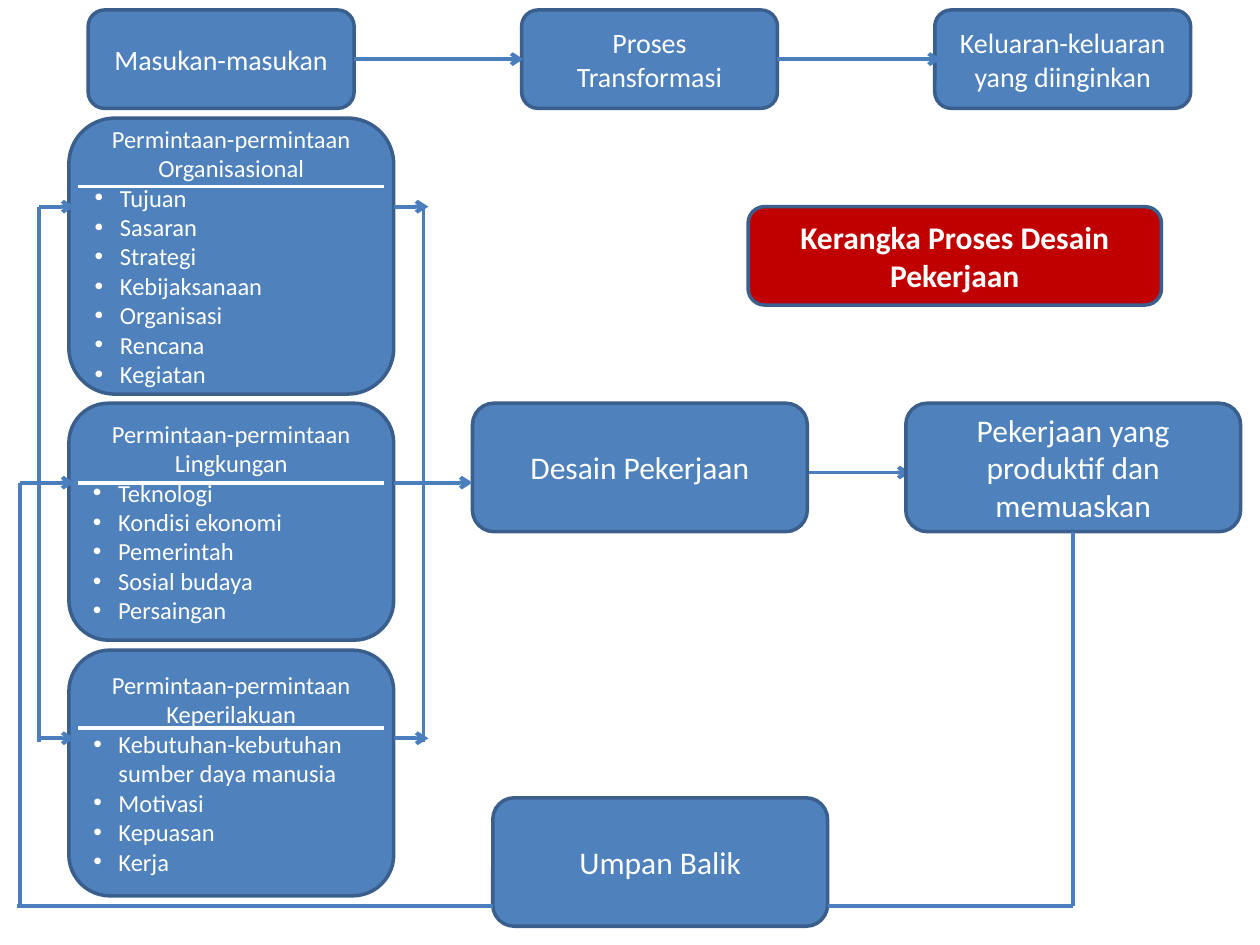
from pptx import Presentation
from pptx.dml.color import RGBColor
from pptx.enum.shapes import MSO_CONNECTOR, MSO_SHAPE
from pptx.enum.text import MSO_ANCHOR, PP_ALIGN
from pptx.oxml.ns import qn
from pptx.util import Pt
from lxml.etree import SubElement

HUES = {"blue": "4F81BD", "edge": "3A5F8C", "line": "4B7EBC",
        "red": "C00000", "white": "FFFFFF"}
FONT = "Calibri"

# Panel top, height, offset of rule, heading, items
PANELS = [
    (67.5, 157.7, 39.1, "Permintaan-permintaan Organisasional",
     ["Tujuan", "Sasaran", "Strategi", "Kebijaksanaan", "Organisasi",
      "Rencana", "Kegiatan"]),
    (230.4, 135.4, 45.4, "Permintaan-permintaan Lingkungan",
     ["Teknologi", "Kondisi ekonomi", "Pemerintah", "Sosial budaya",
      "Persaingan"]),
    (371.5, 140.4, 44.7, "Permintaan-permintaan Keperilakuan",
     ["Kebutuhan-kebutuhan sumber daya manusia", "Motivasi", "Kepuasan",
      "Kerja"]),
]


def color(name):
    return RGBColor.from_string(HUES[name])


def add_line(slide, x1, y1, x2, y2, hue="line", arrow=False):
    line = slide.shapes.add_connector(
        MSO_CONNECTOR.STRAIGHT, Pt(x1), Pt(y1), Pt(x2), Pt(y2))
    line.line.color.rgb = color(hue)
    line.line.width = Pt(2.25)
    props = line._element.spPr
    if arrow:
        SubElement(props.find(qn("a:ln")), qn("a:tailEnd"), type="arrow")
    SubElement(props, qn("a:effectLst"))


def add_run(para, text, size, bold=False):
    run = para.add_run()
    run.text = text
    run.font.name = FONT
    run.font.size = Pt(size)
    run.font.bold = bold
    run.font.color.rgb = color("white")


def add_box(slide, box, text, size, hue="blue", bold=False):
    """Draw a rounded box with centred text and return its text frame."""
    shape = slide.shapes.add_shape(
        MSO_SHAPE.ROUNDED_RECTANGLE, *(Pt(v) for v in box))
    shape.shadow.inherit = False
    shape.fill.solid()
    shape.fill.fore_color.rgb = color(hue)
    shape.line.color.rgb = color("edge")
    shape.line.width = Pt(2)
    frame = shape.text_frame
    frame.word_wrap = True
    frame.vertical_anchor = MSO_ANCHOR.MIDDLE
    para = frame.paragraphs[0]
    para.alignment = PP_ALIGN.CENTER
    add_run(para, text, size, bold)
    return frame


def add_item(frame, text):
    para = frame.add_paragraph()
    para.alignment = PP_ALIGN.LEFT
    props = para._p.get_or_add_pPr()
    props.set("marL", str(Pt(14.4)))
    props.set("indent", str(-Pt(14.4)))
    SubElement(props, qn("a:buFont"), typeface="Arial")
    SubElement(props, qn("a:buChar"), char="•")
    add_run(para, text, 14)


def add_stages(slide, x, y, w, h):
    """Top row: input, process, output."""
    wide = 146.2
    mid, last = x + 247.7, x + w - wide
    add_box(slide, (x, y, 152, h), "Masukan-masukan", 16)
    add_box(slide, (mid, y, wide, h), "Proses Transformasi", 16)
    add_box(slide, (last, y, wide, h), "Keluaran-keluaran yang diinginkan", 16)
    axis = y + h / 2
    add_line(slide, x + 152, axis, mid + 1, axis, arrow=True)
    add_line(slide, mid + wide, axis, last + 3.5, axis, arrow=True)


def add_panel(slide, x, y, w, h, rule, head, items):
    """Demand panel: heading, white rule, bullets."""
    frame = add_box(slide, (x, y, w, h), head, 14)
    for item in items:
        add_item(frame, item)
    add_line(slide, x + 5.2, y + rule, x + w - 5.4, y + rule, "white")


def add_links(slide, x, y, w, h):
    """Rails on both sides of the panels, with arrows at top and bottom."""
    left, right = x - 17, x + w + 17
    for rail in (left, right):
        add_line(slide, rail, y, rail, y + h + 2)
    for level in (y, y + h):
        add_line(slide, left, level, x + 3.2, level, arrow=True)
        add_line(slide, x + w, level, right + 2.8, level, arrow=True)


def add_work(slide, x, y, w, h):
    """Job design and its result."""
    wide = 191.3
    last = x + w - wide
    axis = y + 39.6
    add_line(slide, x + wide, axis, last + 2.7, axis, arrow=True)
    add_box(slide, (x, y, wide, h), "Desain Pekerjaan", 18)
    add_box(slide, (last, y, wide, h),
            "Pekerjaan yang produktif dan memuaskan", 18)


def add_loop(slide, x, y, w, h):
    """Feedback path from the result back to the panels."""
    right, base = x + w, y + h
    start, wide = x + 270.3, 191.3
    add_box(slide, (start, base - 61.8, wide, 73.4), "Umpan Balik", 18)
    add_line(slide, right, y + 28.3, right, base)
    add_line(slide, right, base, start + wide, base)
    add_line(slide, start, base, x - 1.8, base)
    add_line(slide, x, y, x, base)
    add_line(slide, x, y, x + 31.2, y, arrow=True)


def main():
    deck = Presentation()
    deck.slide_width, deck.slide_height = Pt(720), Pt(540)
    slide = deck.slides.add_slide(deck.slide_layouts[6])
    left, wide, axis = 39.4, 185.6, 275.8

    add_stages(slide, 50.4, 5.7, 630, 56.2)
    for top, high, rule, head, items in PANELS:
        add_panel(slide, left, top, wide, high, rule, head, items)
    add_work(slide, 270, 230.4, 438.9, 73.4)
    add_line(slide, left + wide, axis, 270, axis, arrow=True)
    add_loop(slide, 11.3, axis, 602, 241.9)
    add_links(slide, left, 118.1, wide, 303.8)
    # Title
    add_box(slide, (427.5, 118.1, 236.2, 56.2),
            "Kerangka Proses Desain Pekerjaan", 18, "red", True)
    deck.save("out.pptx")


if __name__ == "__main__":
    main()
